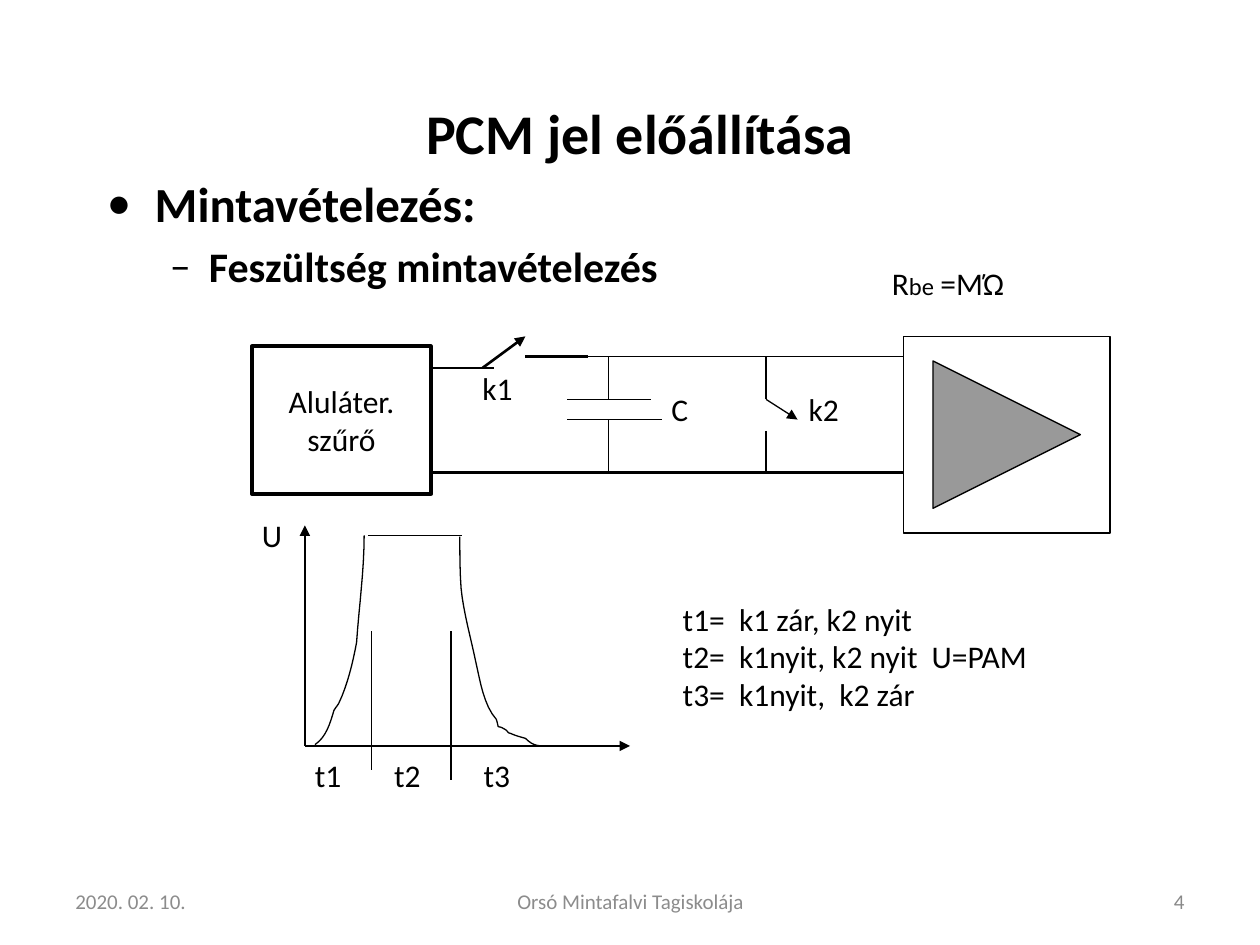
"""Build the slide on sampling a voltage for a PCM signal."""
from lxml import etree
from pptx import Presentation
from pptx.dml.color import RGBColor
from pptx.enum.shapes import MSO_CONNECTOR, MSO_SHAPE
from pptx.enum.text import MSO_ANCHOR, PP_ALIGN
from pptx.oxml.ns import qn
from pptx.util import Emu, Pt

LEFT, MID, RIGHT = PP_ALIGN.LEFT, PP_ALIGN.CENTER, PP_ALIGN.RIGHT
TOP, CENTER = MSO_ANCHOR.TOP, MSO_ANCHOR.MIDDLE
RECT, BUTTON = MSO_SHAPE.RECTANGLE, MSO_SHAPE.ACTION_BUTTON_FORWARD_OR_NEXT
STRAIGHT = MSO_CONNECTOR.STRAIGHT
PX = 9144
FONT = "Calibri"
HUES = {"ink": "000000", "paper": "FFFFFF", "foot": "8C8C8C", "page": "898989"}

TITLE = ("PCM jel előállítása", (83, 67, 850, 75))
BODY = (75, 133, 850, 533)
POINTS = [
    ("Mintavételezés:", 28, "•", 38, 38),
    ("Feszültség mintavételezés", 24, "–", 81, 31),
]
FILTER = ("Aluláter.\nszűrő", (200, 275, 142, 117))
AMP = (717, 267, 164, 156)
WIRES = [
    (342, 292, 392, 292, 1.5, False),
    (342, 375, 717, 375, 1.5, False),
    (383, 292, 417, 267, 1.5, True),
    (417, 283, 467, 283, 1.5, False),
    (458, 283, 717, 283, 0.75, False),
    (483, 283, 483, 317, 0.75, False),
    (450, 317, 517, 317, 0.75, False),
    (450, 333, 525, 333, 0.75, False),
    (483, 333, 483, 375, 0.75, False),
    (608, 283, 608, 317, 0.75, False),
    (608, 317, 633, 333, 0.75, True),
    (608, 342, 608, 375, 0.75, False),
]
GRAPH = [
    (242, 592, 242, 417, 0.75, True),
    (242, 592, 500, 592, 0.75, True),
    (292, 425, 367, 425, 0.75, False),
    (295, 501, 295, 611, 0.75, False),
    (358, 501, 358, 619, 0.75, False),
]
RISE = [
    (250, 591), (259, 585), (262, 574), (265, 564), (266, 562), (268, 560),
    (269, 558), (276, 543), (280, 526), (283, 510), (285, 481), (289, 453),
    (289, 425),
]
FALL = [
    (365, 426), (365, 440), (365, 453), (366, 467), (368, 487), (374, 507),
    (378, 527), (381, 540), (384, 560), (394, 571), (397, 581), (393, 574),
    (401, 579), (403, 580), (403, 582), (405, 582), (409, 584), (417, 586),
    (417, 586), (424, 593), (428, 592), (438, 592),
]
LABELS = [
    ("k1", (373, 288, 53, 50)),
    ("k2", (632, 305, 53, 50)),
    ("C", (523, 305, 42, 50)),
    ("U", (198, 405, 44, 50)),
    ("t1", (240, 595, 46, 50)),
    ("t2", (303, 595, 66, 50)),
    ("t3", (374, 595, 46, 50)),
    ("t1=  k1 zár, k2 nyit\nt2=  k1nyit, k2 nyit  U=PAM\nt3=  k1nyit,  k2 zár",
     (532, 471, 409, 130)),
]
OHMS = ([("R", 18), ("be", 14), (" ", 16), ("=MΏ", 18)], (698, 205, 125, 40))
FOOTER = [
    ("2020. 02. 10.", (50, 695, 233, 40), LEFT, "foot"),
    ("Orsó Mintafalvi Tagiskolája", (342, 695, 317, 40), MID, "foot"),
    ("4", (717, 695, 233, 40), RIGHT, "page"),
]


def scale(nums):
    return [Emu(round(n * PX)) for n in nums]


def hue(name):
    return RGBColor.from_string(HUES[name])


def style(run, size, bold=False, ink="ink"):
    run.font.name, run.font.size, run.font.bold = FONT, Pt(size), bold
    run.font.color.rgb = hue(ink)


def write(shape, text, size=18, bold=False, align=LEFT, anchor=TOP, ink="ink"):
    frame = shape.text_frame
    frame.word_wrap, frame.vertical_anchor = True, anchor
    frame.text = text
    for para in frame.paragraphs:
        para.alignment = align
        for run in para.runs:
            style(run, size, bold, ink)


def label(slide, text, area, **look):
    box = slide.shapes.add_textbox(*scale(area))
    write(box, text, **look)
    return box


def block(slide, kind, area, width):
    shape = slide.shapes.add_shape(kind, *scale(area))
    shape.shadow.inherit = False
    shape.fill.solid()
    shape.fill.fore_color.rgb = hue("paper")
    shape.line.color.rgb, shape.line.width = hue("ink"), Pt(width)
    return shape


def wire(slide, x1, y1, x2, y2, width, arrow):
    line = slide.shapes.add_connector(STRAIGHT, *scale((x1, y1, x2, y2)))
    line.line.color.rgb, line.line.width = hue("ink"), Pt(width)
    props = line._element.spPr
    if arrow:
        etree.SubElement(props.find(qn("a:ln")), qn("a:tailEnd"), type="triangle")
    etree.SubElement(props, qn("a:effectLst"))


def bend(knots, steps=8):
    dots = [knots[0]]
    for i in range(0, len(knots) - 1, 3):
        for k in range(1, steps + 1):
            t = k / steps
            mix = ((1 - t) ** 3, 3 * t * (1 - t) ** 2, 3 * t * t * (1 - t), t ** 3)
            dots.append(tuple(sum(m * p[a] for m, p in zip(mix, knots[i:i + 4]))
                              for a in (0, 1)))
    return dots


def curve(slide, knots):
    dots = [scale(dot) for dot in bend(knots)]
    pen = slide.shapes.build_freeform(*dots[0])
    pen.add_line_segments(dots[1:], close=False)
    shape = pen.convert_to_shape()
    shape.shadow.inherit = False
    shape.fill.background()
    shape.line.color.rgb, shape.line.width = hue("ink"), Pt(0.75)


def bullets(slide):
    box = label(slide, "\n".join(point[0] for point in POINTS), BODY, bold=True)
    for para, (_, size, mark, left, hang) in zip(box.text_frame.paragraphs, POINTS):
        para.space_before = Pt(size * 0.2)
        para.runs[0].font.size = Pt(size)
        props = para._p.get_or_add_pPr()
        props.set("marL", str(left * PX))
        props.set("indent", str(-hang * PX))
        etree.SubElement(props, qn("a:buFont"), typeface=FONT)
        etree.SubElement(props, qn("a:buChar"), char=mark)


def main():
    deck = Presentation()
    deck.slide_width, deck.slide_height = scale((1000, 750))
    slide = deck.slides.add_slide(deck.slide_layouts[6])
    label(slide, *TITLE, size=32, bold=True, align=MID, anchor=CENTER)
    bullets(slide)
    text, area = FILTER
    write(block(slide, RECT, area, 2.25), text, align=MID, anchor=CENTER)
    for item in WIRES + GRAPH:
        wire(slide, *item)
    block(slide, BUTTON, AMP, 0.75)
    for knots in (RISE, FALL):
        curve(slide, knots)
    for item in LABELS:
        label(slide, *item)
    parts, area = OHMS
    para = label(slide, "", area).text_frame.paragraphs[0]
    for text, size in parts:
        run = para.add_run()
        run.text = text
        style(run, size)
    for text, area, align, ink in FOOTER:
        label(slide, text, area, size=12, align=align, anchor=CENTER, ink=ink)
    deck.save("out.pptx")


if __name__ == "__main__":
    main()
